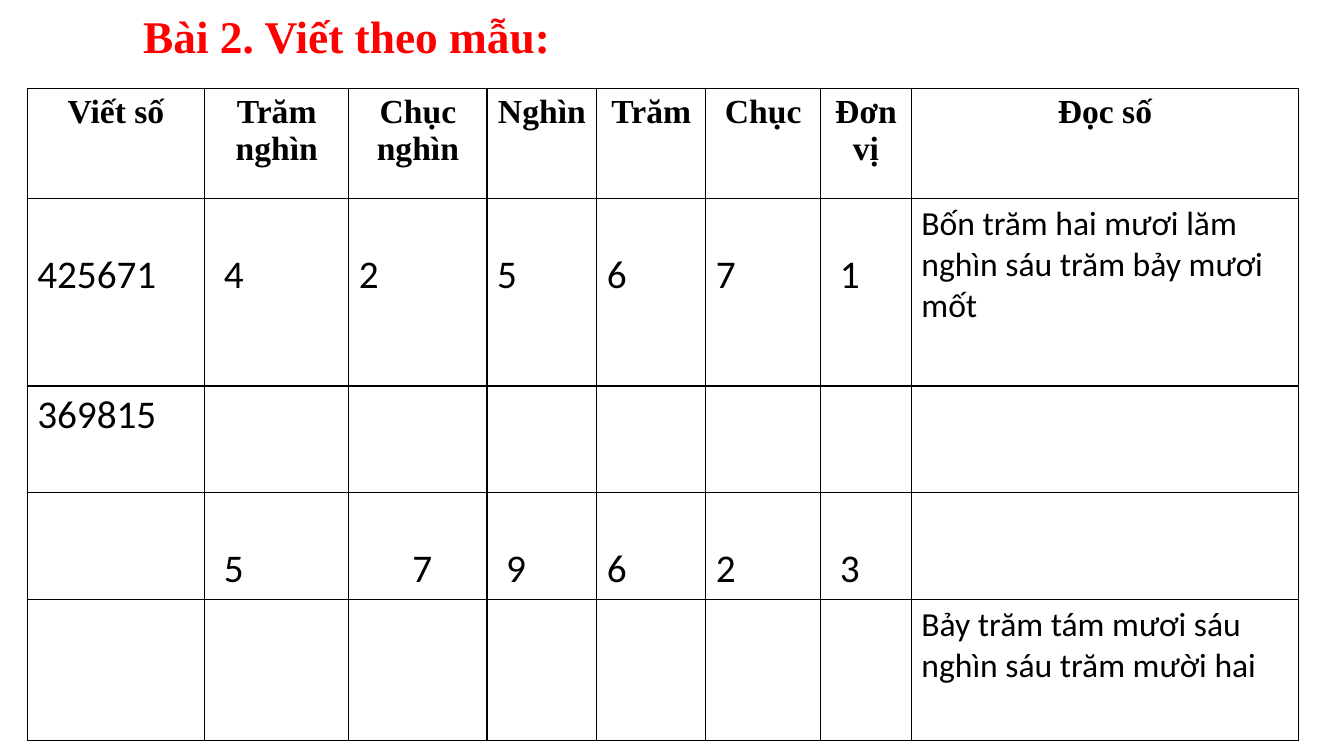
from lxml import etree
from pptx import Presentation, util as u
from pptx.dml.color import RGBColor
from pptx.enum import text
from pptx.oxml.ns import qn

BLACK, RED, WHITE = "000000", "FF0000", "FFFFFF"
COLS = [1.76, 1.43, 1.37, 1.09, 1.08, 1.14, 0.9, 3.84]
ROWS = [1.09, 1.86, 1.06, 1.06, 1.4]
HEADERS = ["Viết số", "Trăm nghìn", "Chục nghìn", "Nghìn", "Trăm", "Chục",
           "Đơn vị", "Đọc số"]
NUMBERS = [
    ["425671", *"425671", "Bốn trăm hai mươi lăm nghìn sáu trăm bảy mươi mốt"],
    ["369815", *[""] * 7],
    ["", *"579623", ""],
    [*[""] * 7, "Bảy trăm tám mươi sáu nghìn sáu trăm mười hai"],
]
LOWERED_ROWS = (1, 3)
LINE = 0.47  # height of one line of digits
INDENTS = {(1, 1): 0.09, (1, 6): 0.09,
           (3, 1): 0.09, (3, 2): 0.53, (3, 3): 0.09, (3, 6): 0.09}
HEADER = {"name": "Times New Roman", "size": u.Pt(24), "bold": True}
DIGITS = {"name": "Calibri", "size": u.Pt(28), "bold": False}
WORDS = {**DIGITS, "size": u.Pt(24)}
TITLE = {**HEADER, "size": u.Pt(32.4)}


def rgb(color):
    return RGBColor.from_string(color)


def write(p, words, style, color=BLACK):
    r = p.add_run()
    r.text = words
    for name, value in style.items():
        setattr(r.font, name, value)
    r.font.color.rgb = rgb(color)


def add_borders(cell):
    tcPr = cell._tc.get_or_add_tcPr()
    for i, side in enumerate(("lnL", "lnR", "lnT", "lnB")):
        ln = etree.Element(qn(f"a:{side}"), w=str(u.Pt(1)))
        fill = etree.SubElement(ln, qn("a:solidFill"))
        etree.SubElement(fill, qn("a:srgbClr"), val=BLACK)
        tcPr.insert(i, ln)


def add_title(s, left, top, width, height):
    sp = s.shapes.title
    box = {"left": left, "top": top, "width": width, "height": height}
    for name, value in box.items():
        setattr(sp, name, u.Inches(value))
    tf = sp.text_frame
    layout = {"auto_size": text.MSO_AUTO_SIZE.NONE, "word_wrap": True,
              "vertical_anchor": text.MSO_ANCHOR.TOP, "margin_top": 0}
    for name, value in layout.items():
        setattr(tf, name, value)
    p = tf.paragraphs[0]
    p.alignment = text.PP_ALIGN.LEFT
    p.line_spacing = 0.9
    write(p, "Bài 2. Viết theo mẫu:", TITLE, RED)


def fill_cell(cell, row, col, words):
    cell.fill.solid()
    cell.fill.fore_color.rgb = rgb(WHITE)
    add_borders(cell)
    if not words:
        return
    p = cell.text_frame.paragraphs[0]
    p.alignment = text.PP_ALIGN.LEFT if row else text.PP_ALIGN.CENTER
    last = col == len(COLS) - 1
    write(p, words, HEADER if row == 0 else WORDS if last else DIGITS)
    cell.margin_left = u.Inches(0.1 + INDENTS.get((row, col), 0))
    if row in LOWERED_ROWS and not last:
        cell.margin_top = u.Inches(0.05 + LINE)


def add_number_table(s, left, top):
    box = [u.Inches(n) for n in (left, top, sum(COLS), sum(ROWS))]
    table = s.shapes.add_table(len(ROWS), len(COLS), *box).table
    table.first_row = table.horz_banding = False
    for column, width in zip(table.columns, COLS):
        column.width = u.Inches(width)
    for row, height in zip(table.rows, ROWS):
        row.height = u.Inches(height)
    for i, values in enumerate([HEADERS, *NUMBERS]):
        for j, words in enumerate(values):
            fill_cell(table.cell(i, j), i, j, words)


def main():
    prs = Presentation()
    prs.slide_width, prs.slide_height = u.Inches(13.33), u.Inches(7.5)
    s = prs.slides.add_slide(prs.slide_layouts[5])
    add_number_table(s, 0.27, 0.88)
    add_title(s, 1.32, 0.14, 9, 1.1)
    prs.save("out.pptx")


if __name__ == "__main__":
    main()
